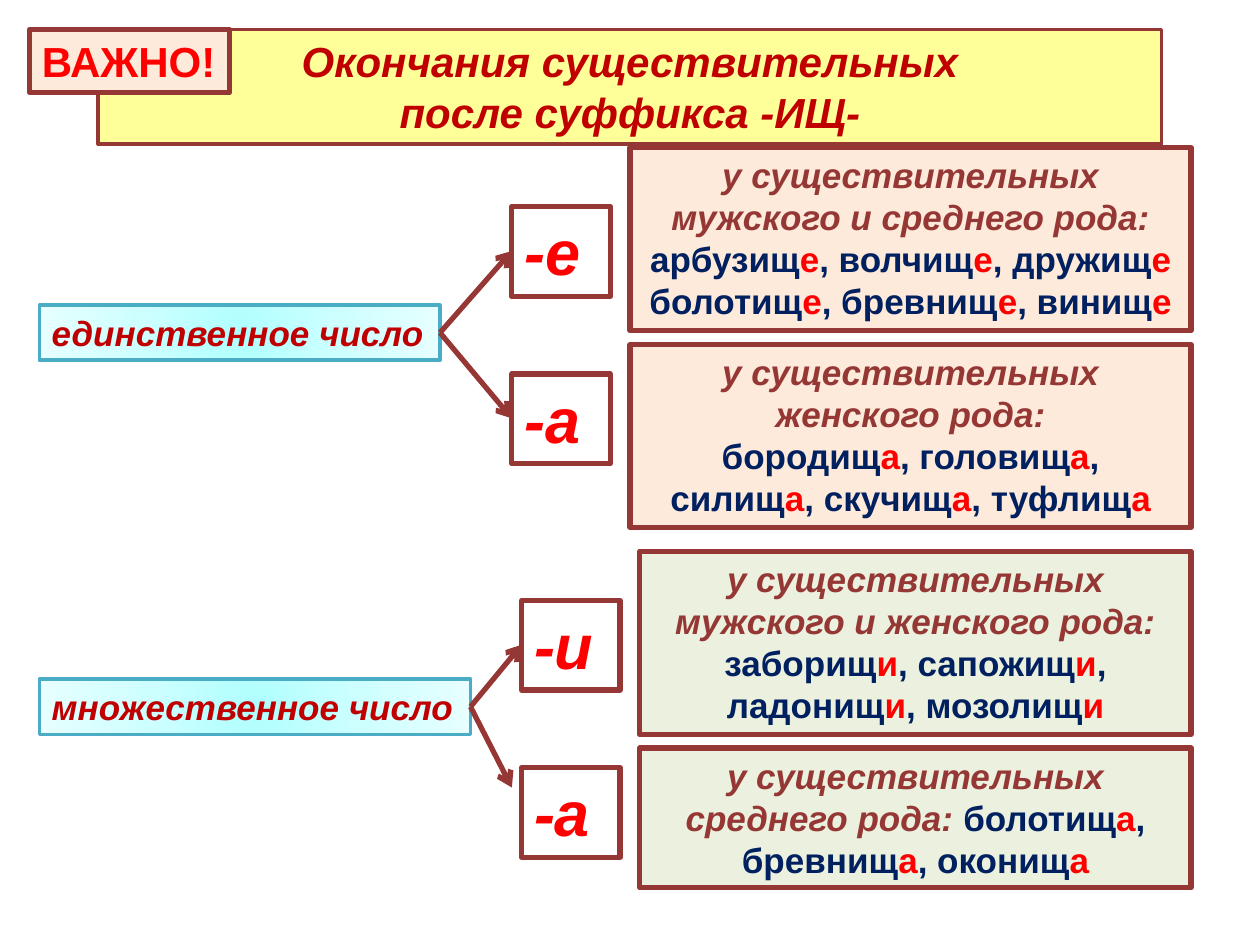
import pptx
import pptx.util
import pptx.dml.color
import pptx.enum.shapes
import pptx.enum.text
import pptx.oxml
import pptx.oxml.ns
from lxml import etree

# Content: card paragraphs are (heading, examples); "|" sets off each ending
TITLE = ["Окончания существительных", "после суффикса -ИЩ-"]
BADGE = "ВАЖНО!"
GROUPS = [
    {"label": "единственное число", "label_box": (4, 31, 40.7, 5.6),
     "ending_left": 52, "card_left": 64, "fill": "peach",
     "branches": [
         {"ending": "-е", "top": 21, "tip": (52, 25.5), "card": (15, 18.6),
          "text": [("у существительных", ""), ("мужского и среднего рода:", ""),
                   ("", "арбузищ|е|, волчищ|е|, дружищ|е| болотищ|е|, бревнищ|е|, винищ|е")]},
         {"ending": "-а", "top": 38, "tip": (52, 42.5), "card": (35, 18.6),
          "text": [("у существительных женского рода:", ""),
                   ("", "бородищ|а|, головищ|а|,"),
                   ("", "силищ|а|, скучищ|а|, туфлищ|а")]},
     ]},
    {"label": "множественное число", "label_box": (4, 69, 43.8, 5.6),
     "ending_left": 53, "card_left": 65, "fill": "green",
     "branches": [
         {"ending": "-и", "top": 61, "tip": (53, 65.5), "card": (56, 18.6),
          "text": [("у существительных", ""), ("мужского и женского рода:", ""),
                   ("", "заборищ|и|, сапожищ|и|,"),
                   ("", "ладонищ|и|, мозолищ|и")]},
         {"ending": "-а", "top": 78, "tip": (52, 80), "card": (76, 14.2),
          "text": [("у существительных среднего рода: ",
                    "болотищ|а|, бревнищ|а|, оконищ|а")]},
     ]},
]

# Theme
COLOURS = {"brown": "953735", "crimson": "C00000", "red": "FF0000",
           "navy": "002060", "yellow": "FFFF99", "peach": "FDEADA",
           "green": "EBF1DE", "teal": "4BACC6"}
GLOW = [(0, "AFFFFF"), (50, "CEFFFF"), (100, "E7FFFF")]
STYLES = {
    "title": {"size": 24, "italic": True, "colour": "crimson"},
    "badge": {"size": 24, "italic": False, "colour": "red"},
    "label": {"size": 20, "italic": True, "colour": "crimson"},
    "ending": {"size": 36, "italic": True, "colour": "red"},
    "heading": {"size": 20, "italic": True, "colour": "brown"},
    "stem": {"size": 20, "italic": False, "colour": "navy"},
    "suffix": {"size": 20, "italic": False, "colour": "red"},
}
CENTER = pptx.enum.text.PP_ALIGN.CENTER
LEFT = pptx.enum.text.PP_ALIGN.LEFT

# Grid of 128 columns by 96 rows
WIDTH, HEIGHT = pptx.util.Inches(10), pptx.util.Inches(7.5)
CELL = WIDTH / 128
TITLE_BOX = (10, 3, 108, 11.65)
BADGE_BOX = (3, 3, 20.35, 6.4)
ENDING_SIZE = (10, 9.1)
CARD_RIGHT = 121


def cells(*values):
    return [round(value * CELL) for value in values]


def colour(name):
    return pptx.dml.color.RGBColor.from_string(COLOURS[name])


def draw_line(line, name, width):
    line.color.rgb = colour(name)
    line.width = pptx.util.Pt(width)


def write(shape, paragraphs, align=LEFT, wrap=True):
    """Each paragraph is a list of (text, style name) runs."""
    frame = shape.text_frame
    settings = {"word_wrap": wrap,
                "auto_size": pptx.enum.text.MSO_AUTO_SIZE.NONE,
                "vertical_anchor": pptx.enum.text.MSO_ANCHOR.TOP}
    for name, value in settings.items():
        setattr(frame, name, value)
    for index, runs in enumerate(paragraphs):
        paragraph = frame.add_paragraph() if index else frame.paragraphs[0]
        paragraph.alignment = align
        for text, style_name in runs:
            run = paragraph.add_run()
            run.text = text
            style = STYLES[style_name]
            font_values = {"name": "Arial", "bold": True, "italic": style["italic"],
                           "size": pptx.util.Pt(style["size"])}
            for name, value in font_values.items():
                setattr(run.font, name, value)
            run.font.color.rgb = colour(style["colour"])


def add_box(slide, box, fill=None, line="brown", width=3):
    shape = slide.shapes.add_shape(pptx.enum.shapes.MSO_SHAPE.RECTANGLE, *cells(*box))
    shape.shadow.inherit = False
    if fill:
        shape.fill.solid()
        shape.fill.fore_color.rgb = colour(fill)
    else:
        shape.fill.background()
    draw_line(shape.line, line, width)
    return shape


def add_glow(shape):
    """Replace the fill by a round gradient from the centre."""
    properties = shape.fill._xPr
    properties.remove(properties.find(pptx.oxml.ns.qn("a:noFill")))
    stops = "".join(f'<a:gs pos="{place * 1000}"><a:srgbClr val="{value}"/></a:gs>'
                    for place, value in GLOW)
    gradient = pptx.oxml.parse_xml(
        f'<a:gradFill {pptx.oxml.ns.nsdecls("a")} rotWithShape="1"><a:gsLst>{stops}</a:gsLst>'
        '<a:path path="circle"><a:fillToRect l="50000" t="50000" r="50000" b="50000"/>'
        '</a:path></a:gradFill>')
    properties.find(pptx.oxml.ns.qn("a:prstGeom")).addnext(gradient)


def add_arrow(slide, start, tip):
    connector = slide.shapes.add_connector(
        pptx.enum.shapes.MSO_CONNECTOR.STRAIGHT, *cells(*start, *tip))
    draw_line(connector.line, "brown", 3)
    properties = connector._element.spPr
    outline = properties.find(pptx.oxml.ns.qn("a:ln"))
    etree.SubElement(outline, pptx.oxml.ns.qn("a:tailEnd"), type="arrow")
    etree.SubElement(properties, pptx.oxml.ns.qn("a:effectLst"))


def card_runs(heading, examples):
    runs = [(heading, "heading")]
    runs += [(part, "suffix" if index % 2 else "stem")
             for index, part in enumerate(examples.split("|"))]
    return [run for run in runs if run[0]]


def add_title(slide):
    title = slide.shapes.title
    for name, value in zip(("left", "top", "width", "height"), cells(*TITLE_BOX)):
        setattr(title, name, value)
    title.fill.solid()
    title.fill.fore_color.rgb = colour("yellow")
    draw_line(title.line, "brown", 2.25)
    write(title, [[(text, "title")] for text in TITLE], CENTER)


def add_group(slide, group):
    # Grammatical number
    left, top, width, height = group["label_box"]
    label = add_box(slide, group["label_box"], line="teal", width=2)
    add_glow(label)
    write(label, [[(group["label"], "label")]], wrap=False)
    # Endings, examples and arrows
    for branch in group["branches"]:
        ending = add_box(slide, (group["ending_left"], branch["top"], *ENDING_SIZE))
        write(ending, [[(branch["ending"], "ending")]])
        card_top, card_height = branch["card"]
        card_left = group["card_left"]
        card = add_box(slide, (card_left, card_top, CARD_RIGHT - card_left, card_height),
                       group["fill"])
        write(card, [card_runs(*pair) for pair in branch["text"]], CENTER)
        add_arrow(slide, (left + width, top + height / 2), branch["tip"])


def main():
    presentation = pptx.Presentation()
    presentation.slide_width, presentation.slide_height = WIDTH, HEIGHT
    slide = presentation.slides.add_slide(presentation.slide_layouts[5])
    add_title(slide)
    for group in GROUPS:
        add_group(slide, group)
    badge = add_box(slide, BADGE_BOX, "peach")
    write(badge, [[(BADGE, "badge")]], wrap=False)
    presentation.save("out.pptx")


if __name__ == "__main__":
    main()
